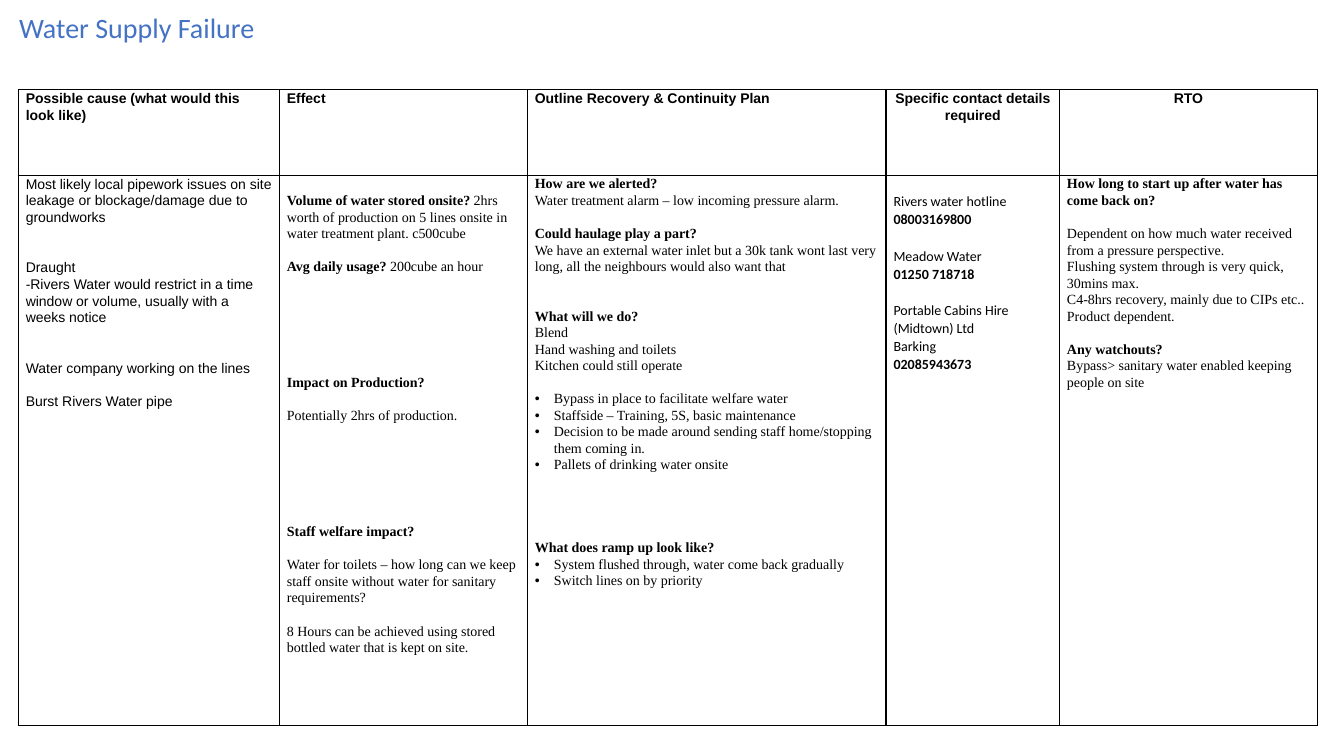
from dataclasses import dataclass

from lxml import etree
from pptx import Presentation
from pptx import util as u
from pptx.dml.color import RGBColor
from pptx.enum import text
from pptx.oxml.ns import qn

BLACK = RGBColor(0x00, 0x00, 0x00)
BLUE = RGBColor(0x44, 0x72, 0xC4)
WHITE = RGBColor(0xFF, 0xFF, 0xFF)

LINE_HEIGHT = {"Arial": 12, "Times New Roman": 11.85, "Calibri": 13.05}
COLUMN_WIDTHS = [6.58, 6.25, 9.04, 4.37, 6.5]
ROW_HEIGHTS = [2.16, 13.87]
FIRST_LINE_DROP = 0.42


@dataclass
class Line:
    plain: str = ""
    bold: str = ""
    gap: int = 0
    bullet: bool = False


@dataclass
class Column:
    heading: str
    font: str
    lines: list
    centred: bool = False
    drop: float = 0


COLUMNS = [
    Column("Possible cause (what would this look like)", "Arial", [
        Line("Most likely local pipework issues on site leakage or blockage/damage due to groundworks"),
        Line("Draught", gap=2),
        Line("-Rivers Water would restrict in a time window or volume, usually with a weeks notice"),
        Line("Water company working on the lines", gap=2),
        Line("Burst Rivers Water pipe", gap=1),
    ]),
    Column("Effect", "Times New Roman", [
        Line("2hrs worth of production on 5 lines onsite in water treatment plant. c500cube",
             bold="Volume of water stored onsite? "),
        Line("200cube an hour", bold="Avg daily usage? ", gap=1),
        Line(bold="Impact on Production?", gap=6),
        Line("Potentially 2hrs of production.", gap=1),
        Line(bold="Staff welfare impact?", gap=6),
        Line("Water for toilets – how long can we keep staff onsite without water "
             "for sanitary requirements?", gap=1),
        Line("8 Hours can be achieved using stored bottled water that is kept on site.", gap=1),
    ], drop=FIRST_LINE_DROP),
    Column("Outline Recovery & Continuity Plan", "Times New Roman", [
        Line(bold="How are we alerted?"),
        Line("Water treatment alarm – low incoming pressure alarm."),
        Line(bold="Could haulage play a part?", gap=1),
        Line("We have an external water inlet but a 30k tank wont last very long, "
             "all the neighbours would also want that"),
        Line(bold="What will we do?", gap=2),
        Line("Blend"),
        Line("Hand washing and toilets"),
        Line("Kitchen could still operate"),
        Line("Bypass in place to facilitate welfare water", gap=1, bullet=True),
        Line("Staffside – Training, 5S, basic maintenance", bullet=True),
        Line("Decision to be made around sending staff home/stopping them coming in.", bullet=True),
        Line("Pallets of drinking water onsite", bullet=True),
        Line(bold="What does ramp up look like?", gap=4),
        Line("System flushed through, water come back gradually", bullet=True),
        Line("Switch lines on by priority", bullet=True),
    ]),
    Column("Specific contact details required", "Calibri", [
        Line("Rivers water hotline"),
        Line(bold="08003169800"),
        Line("Meadow Water", gap=1),
        Line(bold="01250 718718"),
        Line("Portable Cabins Hire (Midtown) Ltd", gap=1),
        Line("Barking"),
        Line(bold="02085943673"),
    ], centred=True, drop=FIRST_LINE_DROP),
    Column("RTO", "Times New Roman", [
        Line(bold="How long to start up after water has come back on?"),
        Line("Dependent on how much water received from a pressure perspective.", gap=1),
        Line("Flushing system through is very quick, 30mins max."),
        Line("C4-8hrs recovery, mainly due to CIPs etc.. Product dependent."),
        Line(bold="Any watchouts?", gap=1),
        Line("Bypass> sanitary water enabled keeping people on site"),
    ], centred=True),
]


def add_run(paragraph, wording, font, size, colour, bold=False):
    run = paragraph.add_run()
    run.text = wording
    run.font.name = font
    run.font.size = u.Pt(size)
    run.font.color.rgb = colour
    run.font.bold = bold


def add_bullet(paragraph):
    properties = paragraph._p.get_or_add_pPr()
    properties.set("marL", str(u.Cm(0.48)))
    properties.set("indent", str(-u.Cm(0.48)))
    etree.SubElement(properties, qn("a:buFont"), typeface="Arial")
    etree.SubElement(properties, qn("a:buChar"), char="•")


def add_borders(cell):
    properties = cell._tc.get_or_add_tcPr()
    for position, side in enumerate(("a:lnL", "a:lnR", "a:lnT", "a:lnB")):
        border = etree.Element(qn(side), w=str(u.Pt(1)))
        fill = etree.SubElement(border, qn("a:solidFill"))
        etree.SubElement(fill, qn("a:srgbClr"), val=str(BLACK))
        properties.insert(position, border)


def fill_cell(cell, lines, font, alignment=text.PP_ALIGN.LEFT, drop=0):
    cell.margin_left = cell.margin_right = u.Cm(0.19)
    cell.margin_top = u.Cm(drop)
    cell.margin_bottom = 0
    cell.fill.solid()
    cell.fill.fore_color.rgb = WHITE
    add_borders(cell)
    frame = cell.text_frame
    for number, line in enumerate(lines):
        paragraph = frame.add_paragraph() if number else frame.paragraphs[0]
        paragraph.alignment = alignment
        paragraph.line_spacing = 1.07
        paragraph.space_before = u.Pt(line.gap * LINE_HEIGHT[font])
        if line.bullet:
            add_bullet(paragraph)
        if line.bold:
            add_run(paragraph, line.bold, font, 10, BLACK, True)
        if line.plain:
            add_run(paragraph, line.plain, font, 10, BLACK)


def add_title(slide, left, top, width, height):
    title = slide.shapes.add_textbox(u.Cm(left), u.Cm(top), u.Cm(width), u.Cm(height))
    frame = title.text_frame
    frame.word_wrap = True
    frame.vertical_anchor = text.MSO_ANCHOR.MIDDLE
    paragraph = frame.paragraphs[0]
    paragraph.line_spacing = 0.9
    add_run(paragraph, "Water Supply Failure", "Calibri", 20, BLUE)


def add_plan_table(slide, left, top):
    table = slide.shapes.add_table(
        len(ROW_HEIGHTS), len(COLUMNS), u.Cm(left), u.Cm(top),
        u.Cm(sum(COLUMN_WIDTHS)), u.Cm(sum(ROW_HEIGHTS))).table
    table.first_row = False
    table.horz_banding = False
    for row, height in zip(table.rows, ROW_HEIGHTS):
        row.height = u.Cm(height)
    for number, (column, width) in enumerate(zip(COLUMNS, COLUMN_WIDTHS)):
        table.columns[number].width = u.Cm(width)
        alignment = text.PP_ALIGN.CENTER if column.centred else text.PP_ALIGN.LEFT
        fill_cell(table.cell(0, number), [Line(bold=column.heading)], "Arial", alignment)
        fill_cell(table.cell(1, number), column.lines, column.font, drop=column.drop)


def main():
    presentation = Presentation()
    presentation.slide_width = u.Cm(33.87)
    presentation.slide_height = u.Cm(19.05)
    slide = presentation.slides.add_slide(presentation.slide_layouts[6])
    add_title(slide, 0.23, 0.13, 29.21, 1.24)
    add_plan_table(slide, 0.46, 2.26)
    presentation.save("out.pptx")


if __name__ == "__main__":
    main()
